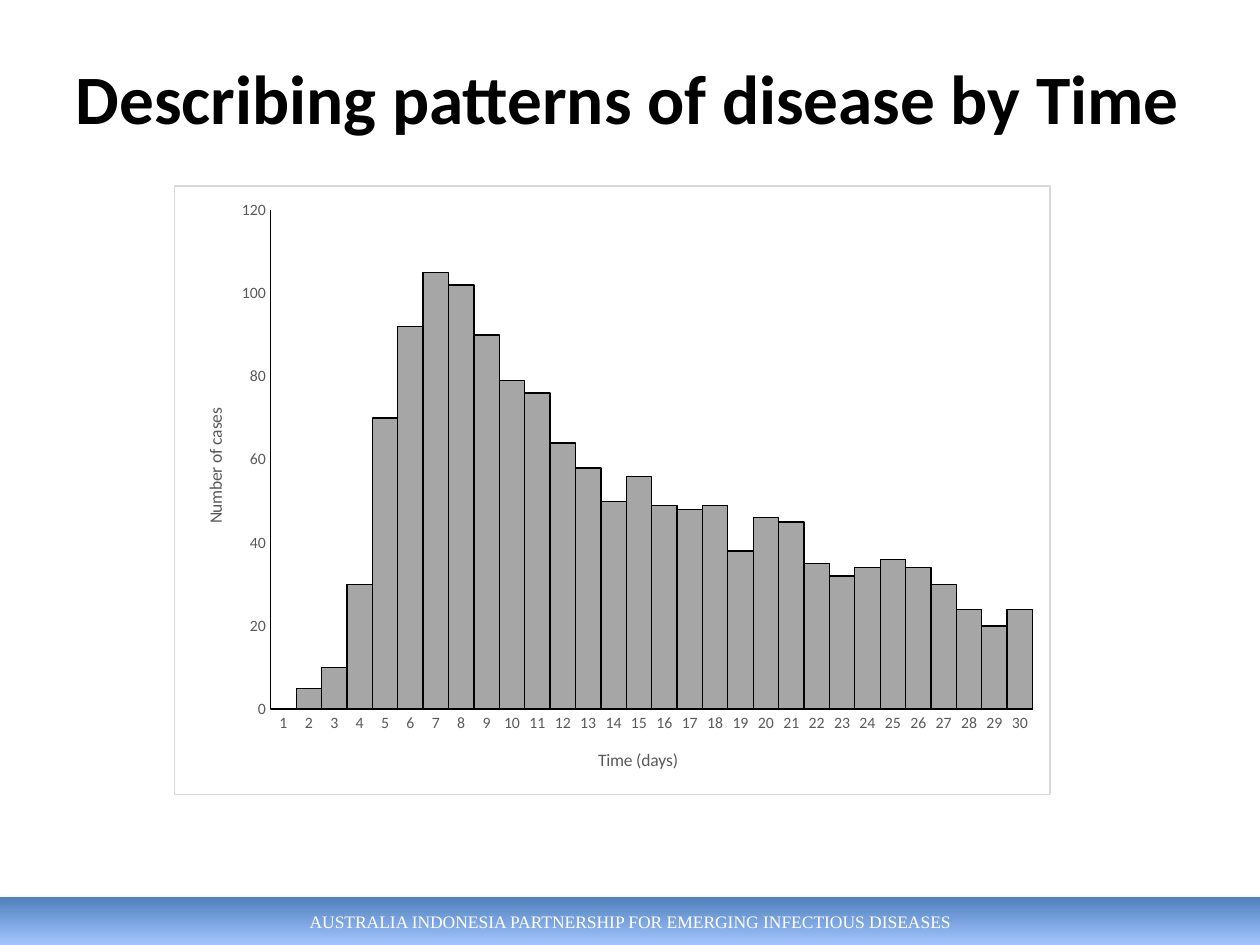
from dataclasses import dataclass

from lxml.etree import SubElement
from pptx import Presentation
from pptx.chart.data import CategoryChartData
from pptx.dml.color import RGBColor
from pptx.enum.chart import XL_CHART_TYPE as ChartType, XL_TICK_MARK as TickMark
from pptx.enum.shapes import MSO_SHAPE as ShapeKind
from pptx.enum.text import MSO_ANCHOR as Anchor, MSO_AUTO_SIZE as AutoSize, PP_ALIGN as Align
from pptx.oxml import parse_xml
from pptx.oxml.ns import nsdecls, qn
from pptx.util import Inches, Pt

BLACK = RGBColor(0x00, 0x00, 0x00)
WHITE = RGBColor(0xFF, 0xFF, 0xFF)
AXIS_TEXT = RGBColor(0x59, 0x59, 0x59)
BAR_GRAY = RGBColor(0xA6, 0xA6, 0xA6)
BAND_TOP = RGBColor(0x4F, 0x81, 0xBD)
BAND_BOTTOM = RGBColor(0xA4, 0xC4, 0xFF)

CASES = (
    0, 5, 10, 30, 70, 92, 105, 102, 90, 79, 76, 64, 58, 50, 56,
    49, 48, 49, 38, 46, 45, 35, 32, 34, 36, 34, 30, 24, 20, 24,
)


@dataclass(frozen=True)
class AxisLook:
    title: str
    x: float
    y: float
    rotation: int


DAYS_AXIS = AxisLook("Time (days)", 0.48, 0.92, 0)
CASES_AXIS = AxisLook("Number of cases", 0.03, 0.36, -90)


def style_font(font, name: str, size: float, color: RGBColor, bold: bool = False) -> None:
    font.name = name
    font.size = Pt(size)
    font.bold = bold
    font.color.rgb = color


def set_layout(parent, index: int, **settings) -> None:
    for old in parent.findall(qn("c:layout")):
        parent.remove(old)
    layout = parse_xml(f"<c:layout {nsdecls('c')}><c:manualLayout/></c:layout>")
    for tag, value in settings.items():
        SubElement(layout[0], qn(f"c:{tag}")).set("val", str(value))
    parent.insert(index, layout)


def style_axis(axis, look: AxisLook) -> None:
    axis.has_major_gridlines = False
    axis.major_tick_mark = axis.minor_tick_mark = TickMark.NONE
    axis.format.line.color.rgb = BLACK
    axis.format.line.width = Pt(0.75)
    style_font(axis.tick_labels.font, "Calibri", 9, AXIS_TEXT)
    frame = axis.axis_title.text_frame
    span = frame.paragraphs[0].add_run()
    span.text = look.title
    style_font(span.font, "Calibri", 10, AXIS_TEXT)
    body = frame._txBody.find(qn("a:bodyPr"))
    body.set("rot", str(look.rotation * 60000))
    body.set("vert", "horz")
    set_layout(axis.axis_title._element, 1, xMode="edge", yMode="edge", x=look.x, y=look.y)


def add_title(page) -> None:
    box = page.shapes.title
    box.left, box.top = Inches(0.5), Inches(0.3)
    box.width, box.height = Inches(9), Inches(0.93)
    frame = box.text_frame
    frame.auto_size = AutoSize.NONE
    frame.vertical_anchor = Anchor.MIDDLE
    para = frame.paragraphs[0]
    para.alignment = Align.LEFT
    span = para.add_run()
    span.text = "Describing patterns of disease by Time"
    style_font(span.font, "Calibri", 39.6, BLACK, bold=True)


def add_footer_band(page) -> None:
    band = page.shapes.add_shape(
        ShapeKind.RECTANGLE, Inches(0), Inches(7.12), Inches(10), Inches(0.38)
    )
    band.line.fill.background()
    band.fill.gradient()
    band.fill.gradient_angle = 270
    for stop, color in zip(band.fill.gradient_stops, (BAND_TOP, BAND_BOTTOM)):
        stop.color.rgb = color
    band.shadow.inherit = False
    band._element.spPr.find(qn("a:effectLst")).append(parse_xml(
        f'<a:outerShdw {nsdecls("a")} blurRad="{Pt(3.1)}" dist="{Pt(1.8)}" dir="5400000" '
        'rotWithShape="0"><a:srgbClr val="000000"><a:alpha val="35000"/></a:srgbClr></a:outerShdw>'
    ))
    frame = band.text_frame
    frame.vertical_anchor = Anchor.MIDDLE
    para = frame.paragraphs[0]
    para.alignment = Align.CENTER
    span = para.add_run()
    span.text = "AUSTRALIA INDONESIA PARTNERSHIP FOR EMERGING INFECTIOUS DISEASES"
    style_font(span.font, "Times New Roman", 10, WHITE)


def add_epidemic_curve(page) -> None:
    data = CategoryChartData()
    data.categories = [str(day) for day in range(1, len(CASES) + 1)]
    data.add_series("Series 1", CASES)
    chart = page.shapes.add_chart(
        ChartType.COLUMN_CLUSTERED, Inches(1.38), Inches(1.47), Inches(6.96), Inches(4.84), data
    ).chart
    chart.has_legend = False
    chart.has_title = False
    style_font(chart.font, "Calibri", 10, BLACK)

    plot = chart.plots[0]
    plot.vary_by_categories = False
    plot.gap_width = 0
    plot.overlap = 100
    bars = plot.series[0].format
    bars.fill.solid()
    bars.fill.fore_color.rgb = BAR_GRAY
    bars.line.color.rgb = BLACK
    bars.line.width = Pt(0.75)

    style_axis(chart.category_axis, DAYS_AXIS)
    style_axis(chart.value_axis, CASES_AXIS)
    chart.value_axis.minimum_scale = 0
    chart.value_axis.maximum_scale = 120
    chart.value_axis.major_unit = 20

    space = chart._chartSpace
    set_layout(
        space.chart.plotArea, 0, layoutTarget="inner", xMode="edge", yMode="edge",
        x=0.11, y=0.04, w=0.87, h=0.82,
    )
    space.chart.addnext(parse_xml(
        f'<c:spPr {nsdecls("c", "a")}><a:solidFill><a:srgbClr val="{WHITE}"/></a:solidFill>'
        f'<a:ln w="{Pt(0.75)}"><a:solidFill><a:srgbClr val="D9D9D9"/></a:solidFill></a:ln></c:spPr>'
    ))


def main() -> None:
    deck = Presentation()
    deck.slide_width, deck.slide_height = Inches(10), Inches(7.5)
    page = deck.slides.add_slide(deck.slide_layouts[5])
    add_footer_band(page)
    add_title(page)
    add_epidemic_curve(page)
    deck.save("out.pptx")


if __name__ == "__main__":
    main()
